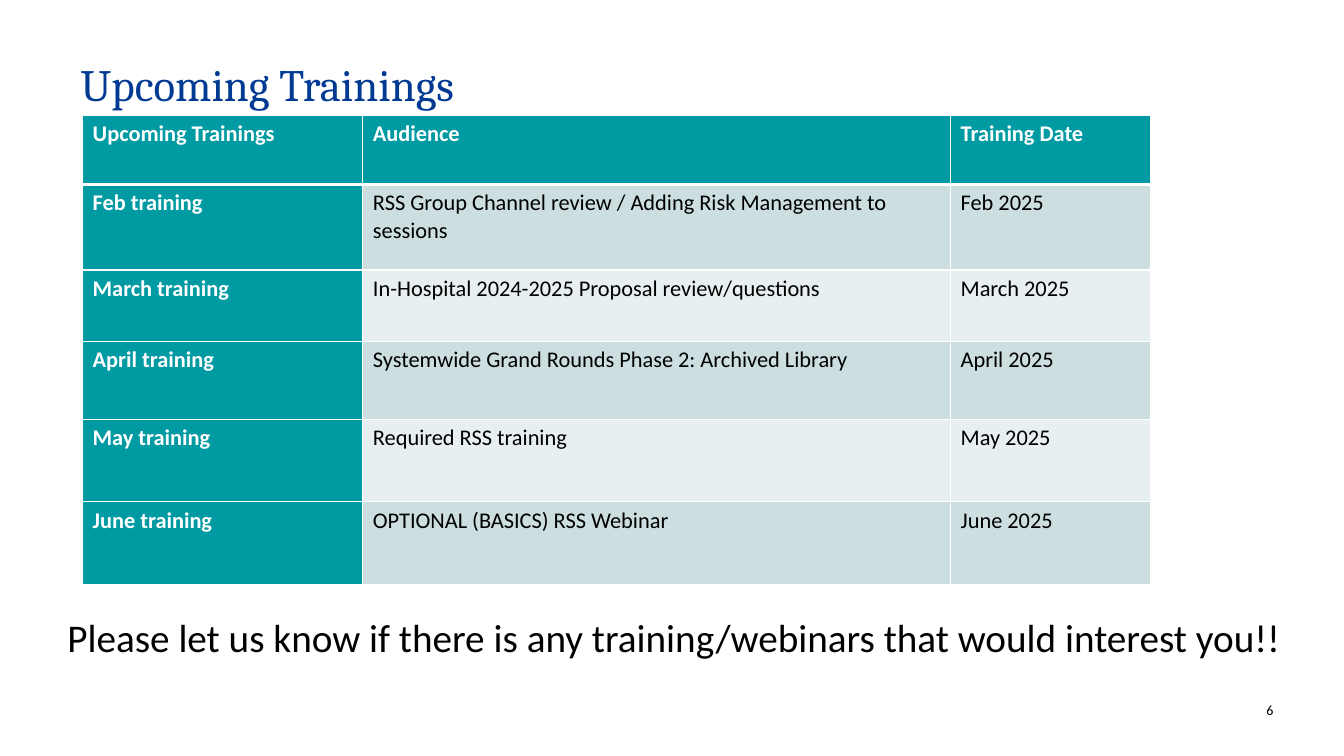
from lxml.etree import SubElement
from pptx import Presentation
from pptx.dml.color import RGBColor
from pptx.enum.text import MSO_ANCHOR as Anchor, PP_ALIGN as Align
from pptx.oxml.ns import qn
from pptx.util import Inches, Pt

COLORS = {
    "title": "003A93",
    "teal": "009AA3",
    "dark_band": "CCDEE0",
    "light_band": "E7EFF0",
    "white": "FFFFFF",
    "black": "000000",
}
TRAININGS = [
    ("Upcoming Trainings", "Audience", "Training Date"),
    ("Feb training", "RSS Group Channel review / Adding Risk Management to sessions", "Feb 2025"),
    ("March training", "In-Hospital 2024-2025 Proposal review/questions", "March 2025"),
    ("April training", "Systemwide Grand Rounds Phase 2: Archived Library", "April 2025"),
    ("May training", "Required RSS training", "May 2025"),
    ("June training", "OPTIONAL (BASICS) RSS Webinar", "June 2025"),
]
COLUMN_SHARES = [26.25, 55.05, 18.7]
ROW_SHARES = [14.8, 18.24, 15.24, 16.52, 17.6, 17.6]


def color(name):
    """Return the named palette colour."""
    return RGBColor.from_string(COLORS[name])


def slide_box(deck, left, top, width, height):
    """Turn percentages of the slide into a box of lengths."""
    across, down = deck.slide_width / 100, deck.slide_height / 100
    return [int(left * across), int(top * down), int(width * across), int(height * down)]


def set_font(para, size, color_name, name="Calibri", bold=False):
    """Format the font of a paragraph."""
    font = para.font
    font.name, font.size, font.bold = name, Pt(size), bold
    font.color.rgb = color(color_name)


def add_title(slide, box, text):
    """Place the title placeholder in its box."""
    title = slide.shapes.title
    title.left, title.top, title.width, title.height = box
    frame = title.text_frame
    frame.text = text
    frame.vertical_anchor = Anchor.TOP
    para = frame.paragraphs[0]
    para.alignment, para.line_spacing = Align.LEFT, 0.9
    set_font(para, 32, "title", "Cambria")


def add_text(slide, box, text, size, align=Align.LEFT, inset=True):
    """Add a one-paragraph text box."""
    frame = slide.shapes.add_textbox(*box).text_frame
    frame.word_wrap = True
    if not inset:
        frame.margin_left = frame.margin_right = frame.margin_top = frame.margin_bottom = 0
    frame.text = text
    para = frame.paragraphs[0]
    para.alignment = align
    set_font(para, size, "black")


def set_borders(cell, widths):
    """Draw white cell borders of the given point widths."""
    properties = cell._tc.get_or_add_tcPr()
    for position, (side, width) in enumerate(widths.items()):
        line = properties.makeelement(qn(f"a:ln{side}"), {"w": str(Pt(width))})
        fill = SubElement(line, qn("a:solidFill"))
        SubElement(fill, qn("a:srgbClr"), val=COLORS["white"])
        properties.insert(position, line)


def add_trainings(slide, box, rows):
    """Add the training table with a header row and a header column."""
    table = slide.shapes.add_table(len(rows), len(rows[0]), *box).table
    table.first_col = True
    for column, share in zip(table.columns, COLUMN_SHARES):
        column.width = int(box[2] * share / 100)
    for row, share in zip(table.rows, ROW_SHARES):
        row.height = int(box[3] * share / 100)
    for r, texts in enumerate(rows):
        band = "dark_band" if r % 2 else "light_band"
        for c, text in enumerate(texts):
            heading = r == 0 or c == 0
            cell = table.cell(r, c)
            cell.text = text
            cell.fill.solid()
            cell.fill.fore_color.rgb = color("teal" if heading else band)
            set_font(cell.text_frame.paragraphs[0], 16, "white" if heading else "black", bold=heading)
            set_borders(cell, {"L": 1, "R": 1, "T": 3 if r == 1 else 1, "B": 3 if r == 0 else 1})


def build_trainings_slide(deck):
    """Build the slide of upcoming trainings."""
    slide = deck.slides.add_slide(deck.slide_layouts[5])
    add_text(slide, slide_box(deck, 91.9, 92.8, 2.85, 2.27), "6", 10, Align.RIGHT, inset=False)
    add_trainings(slide, slide_box(deck, 6.15, 15.2, 79.44, 62.13), TRAININGS)
    add_title(slide, slide_box(deck, 5.25, 7.6, 89.42, 14), "Upcoming Trainings")
    add_text(slide, slide_box(deck, 4.28, 80.53, 93.85, 7.6),
             "Please let us know if there is any training/webinars that would interest you!!", 28)


def main():
    """Create the deck and save it."""
    deck = Presentation()
    deck.slide_width, deck.slide_height = Inches(13.33), Inches(7.5)
    build_trainings_slide(deck)
    deck.save("out.pptx")


if __name__ == "__main__":
    main()
